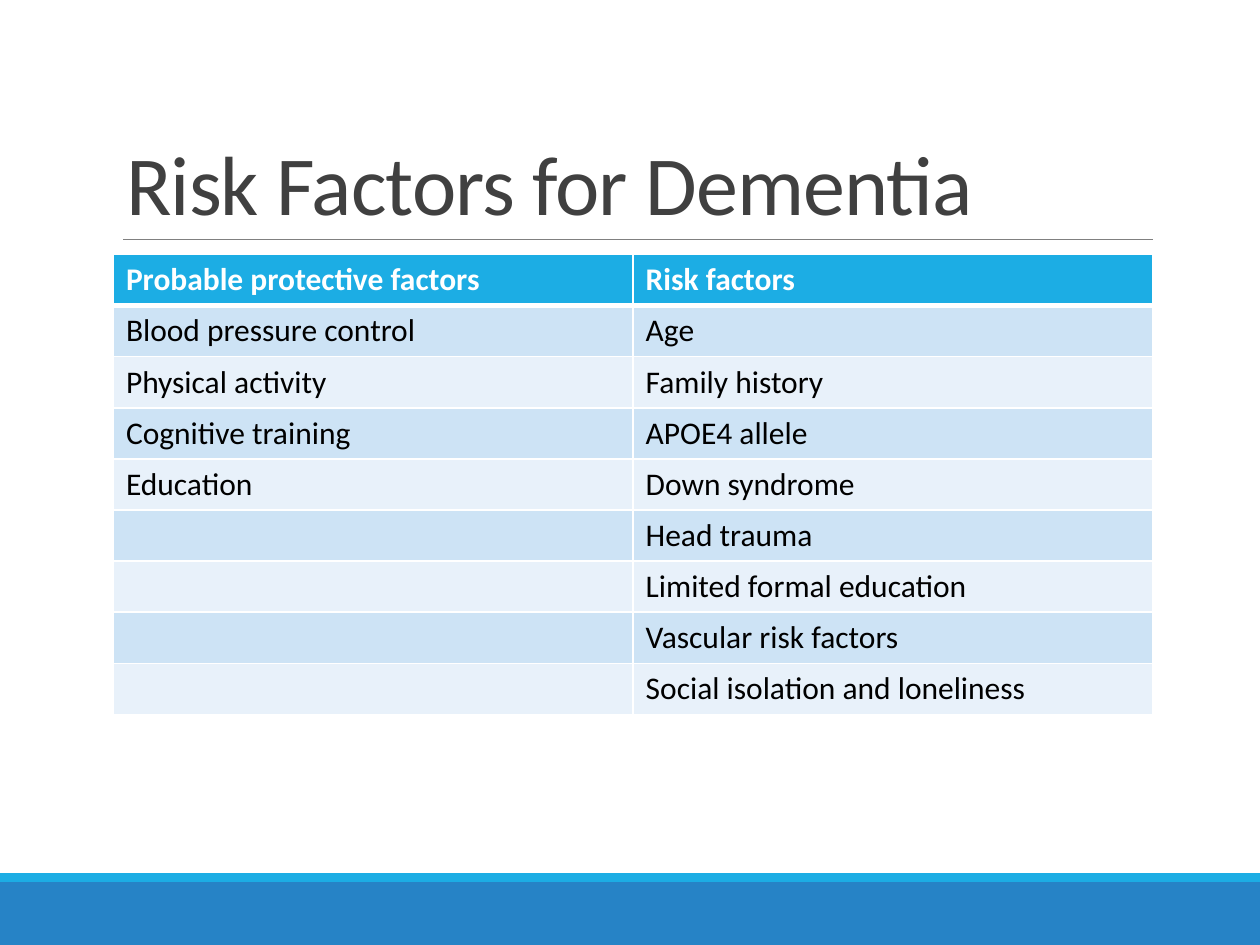
from dataclasses import dataclass
from itertools import zip_longest

from lxml import etree
from pptx import Presentation
from pptx.dml.color import RGBColor
from pptx.enum.shapes import MSO_CONNECTOR, MSO_SHAPE
from pptx.enum.text import MSO_ANCHOR, MSO_AUTO_SIZE, PP_ALIGN
from pptx.oxml.ns import qn
from pptx.util import Inches, Pt

STRAIGHT = MSO_CONNECTOR.STRAIGHT
RECTANGLE = MSO_SHAPE.RECTANGLE
BOTTOM = MSO_ANCHOR.BOTTOM
NO_AUTOFIT = MSO_AUTO_SIZE.NONE
LEFT = PP_ALIGN.LEFT
TITLE_ONLY = 5


@dataclass(frozen=True)
class Theme:
    font: str = "Calibri"
    title_size: int = 48
    table_size: int = 18
    title: str = "404040"
    rule: str = "808080"
    accent: str = "1CADE4"
    footer: str = "2683C6"
    odd_row: str = "CDE3F5"
    even_row: str = "E8F1FA"
    white: str = "FFFFFF"
    text: str = "000000"


THEME = Theme()
MARGIN, CONTENT_WIDTH = 0.9, 8.25
HEADERS = ("Probable protective factors", "Risk factors")
PROTECTIVE = (
    "Blood pressure control",
    "Physical activity",
    "Cognitive training",
    "Education",
)
RISKS = (
    "Age",
    "Family history",
    "APOE4 allele",
    "Down syndrome",
    "Head trauma",
    "Limited formal education",
    "Vascular risk factors",
    "Social isolation and loneliness",
)


def rgb(value):
    return RGBColor.from_string(value)


def style_font(font, size, color, bold=False):
    font.name = THEME.font
    font.size = Pt(size)
    font.bold = bold
    font.color.rgb = rgb(color)


def add_band(slide, top, height, color):
    band = slide.shapes.add_shape(
        RECTANGLE, 0, Inches(top), Inches(10), Inches(height)
    )
    band.shadow.inherit = False
    band.fill.solid()
    band.fill.fore_color.rgb = rgb(color)
    band.line.fill.background()


def add_rule(slide, left, right, y):
    rule = slide.shapes.add_connector(
        STRAIGHT, Inches(left), Inches(y), Inches(right), Inches(y)
    )
    rule.line.color.rgb = rgb(THEME.rule)
    rule.line.width = Pt(0.5)
    etree.SubElement(rule._element.spPr, qn("a:effectLst"))


def set_title(slide, wording):
    title = slide.shapes.title
    title.left, title.top = Inches(MARGIN), Inches(0.31)
    title.width, title.height = Inches(CONTENT_WIDTH), Inches(1.59)
    frame = title.text_frame
    frame.text = wording
    frame.auto_size = NO_AUTOFIT
    frame.vertical_anchor = BOTTOM
    paragraph = frame.paragraphs[0]
    paragraph.alignment = LEFT
    paragraph.line_spacing = 0.85
    run = paragraph.runs[0]
    style_font(run.font, THEME.title_size, THEME.title)
    run._r.get_or_add_rPr().set("spc", "-50")


def set_borders(cell, top, bottom):
    properties = cell._tc.get_or_add_tcPr()
    for side, width in (("L", 1), ("R", 1), ("T", top), ("B", bottom)):
        border = etree.SubElement(properties, qn(f"a:ln{side}"), w=str(Pt(width)))
        fill = etree.SubElement(border, qn("a:solidFill"))
        etree.SubElement(fill, qn("a:srgbClr"), val=THEME.white)


def fill_cell(cell, wording, row):
    header = row == 0
    set_borders(cell, top=3 if row == 1 else 1, bottom=3 if header else 1)
    background = THEME.odd_row if row % 2 else THEME.even_row
    cell.fill.solid()
    cell.fill.fore_color.rgb = rgb(THEME.accent if header else background)
    cell.text = wording
    color = THEME.white if header else THEME.text
    for run in cell.text_frame.paragraphs[0].runs:
        style_font(run.font, THEME.table_size, color, bold=header)


def add_factor_table(slide):
    rows = [HEADERS, *zip_longest(PROTECTIVE, RISKS, fillvalue="")]
    table = slide.shapes.add_table(
        len(rows), len(HEADERS),
        Inches(MARGIN), Inches(2.02), Inches(CONTENT_WIDTH), Inches(3.65),
    ).table
    for row, factors in enumerate(rows):
        for column, factor in enumerate(factors):
            fill_cell(table.cell(row, column), factor, row)


def main():
    presentation = Presentation()
    presentation.slide_width = Inches(10)
    presentation.slide_height = Inches(7.5)
    slide = presentation.slides.add_slide(presentation.slide_layouts[TITLE_ONLY])
    add_band(slide, 7, 0.5, THEME.footer)
    add_band(slide, 6.93, 0.07, THEME.accent)
    add_rule(slide, 0.98, 9.15, 1.9)
    set_title(slide, "Risk Factors for Dementia")
    add_factor_table(slide)
    presentation.save("out.pptx")


if __name__ == "__main__":
    main()
